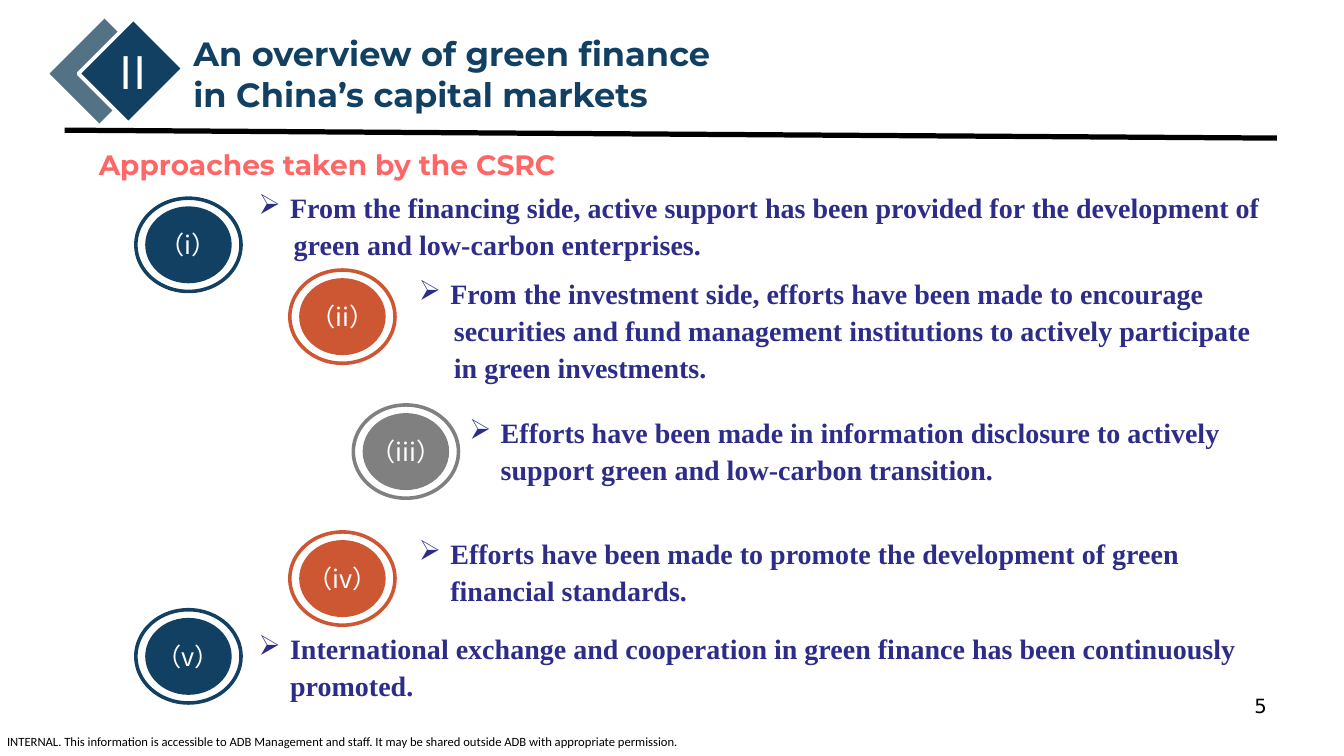
from dataclasses import dataclass

from lxml.etree import SubElement
from pptx import Presentation
from pptx.dml.color import RGBColor
from pptx.enum.shapes import MSO_CONNECTOR, MSO_SHAPE
from pptx.enum.text import MSO_ANCHOR, MSO_AUTO_SIZE, PP_ALIGN
from pptx.oxml.ns import qn
from pptx.util import Cm, Pt

NAVY = RGBColor(0x12, 0x40, 0x62)
SLATE = RGBColor(0x53, 0x72, 0x85)
RUST = RGBColor(0xCC, 0x57, 0x32)
GREY = RGBColor(0x80, 0x80, 0x80)
CORAL = RGBColor(0xFF, 0x66, 0x66)
INDIGO = RGBColor(0x2D, 0x2D, 0x89)
WHITE = RGBColor(0xFF, 0xFF, 0xFF)
BLACK = RGBColor(0x00, 0x00, 0x00)

BADGE_WIDTH, BADGE_HEIGHT = 2.74, 2.44
RING_WIDTH = 0.09
DISC_INSET_X, DISC_INSET_Y = 0.28, 0.25
BULLET_INDENT, CONTINUATION_INDENT = 0.79, 0.88


@dataclass(frozen=True)
class Box:
    left: float
    top: float
    width: float
    height: float

    def lengths(self):
        return Cm(self.left), Cm(self.top), Cm(self.width), Cm(self.height)

    def inset(self, x, y):
        return Box(self.left + x, self.top + y, self.width - 2 * x, self.height - 2 * y)


@dataclass(frozen=True)
class TextStyle:
    font: str
    size: float
    color: RGBColor
    bold: bool = False


@dataclass(frozen=True)
class Approach:
    numeral: str
    color: RGBColor
    badge_left: float
    badge_top: float
    text_box: Box
    lines: tuple


TITLE = TextStyle("Montserrat", 24, NAVY, True)
SUBTITLE = TextStyle("Montserrat", 20, CORAL, True)
SECTION = TextStyle("Noto Sans CJK SC", 32, WHITE)
NUMERAL = TextStyle("Noto Sans CJK SC", 18, WHITE)
BODY = TextStyle("Times New Roman", 20, INDIGO, True)
PAGE = TextStyle("DejaVu Sans", 14, BLACK)
NOTICE = TextStyle("Calibri", 9, BLACK)

APPROACHES = (
    Approach("i", NAVY, 3.38, 4.95, Box(6.27, 5, 26.49, 1.3), (
        "From the financing side, active support has been provided for the development of",
        "green and low-carbon enterprises.")),
    Approach("ii", RUST, 7.26, 6.76, Box(10.31, 7.65, 22.48, 1.27), (
        "From the investment side, efforts have been made to encourage",
        "securities and fund management institutions to actively participate",
        "in green investments.")),
    Approach("iii", GREY, 8.86, 10.16, Box(11.58, 10.69, 20.6, 1.27), (
        "Efforts have been made in information disclosure to actively support green "
        "and low-carbon transition.",)),
    Approach("iv", RUST, 7.26, 13.36, Box(10.31, 13.74, 21.84, 1.27), (
        "Efforts have been made to promote the development of green financial standards.",)),
    Approach("v", NAVY, 3.38, 15.32, Box(6.27, 16.13, 25.88, 1.27), (
        "International exchange and cooperation in green finance has been continuously "
        "promoted.",)),
)


def set_attributes(target, values: dict) -> None:
    for name, value in values.items():
        setattr(target, name, value)


def write(shape, lines: tuple, style: TextStyle, align=PP_ALIGN.LEFT, **frame_format) -> None:
    frame = shape.text_frame
    set_attributes(frame, {"word_wrap": True, "auto_size": MSO_AUTO_SIZE.NONE,
                           "vertical_anchor": MSO_ANCHOR.TOP, **frame_format})
    for index, line in enumerate(lines):
        paragraph = frame.add_paragraph() if index else frame.paragraphs[0]
        paragraph.alignment = align
        run = paragraph.add_run()
        run.text = line
        set_attributes(run.font, {"name": style.font, "size": Pt(style.size), "bold": style.bold})
        run.font.color.rgb = style.color
        SubElement(run._r.get_or_add_rPr(), qn("a:ea"), typeface=style.font)


def no_insets() -> dict:
    return dict.fromkeys(("margin_left", "margin_top", "margin_right", "margin_bottom"), 0)


def add_text(slide, box: Box, lines: tuple, style: TextStyle, **options):
    shape = slide.shapes.add_textbox(*box.lengths())
    write(shape, lines, style, **options)
    return shape


def add_figure(slide, kind, box: Box, fill=None, line=None, line_width=Pt(1)):
    shape = slide.shapes.add_shape(kind, *box.lengths())
    shape.shadow.inherit = False
    if fill is None:
        shape.fill.background()
    else:
        shape.fill.solid()
        shape.fill.fore_color.rgb = fill
    if line is None:
        shape.line.fill.background()
    else:
        shape.line.color.rgb = line
        shape.line.width = line_width
    return shape


def add_diamond(slide, left: float, fill: RGBColor, line=None) -> None:
    box = Box(left, 0.81, 1.78, 1.96)
    diamond = add_figure(slide, MSO_SHAPE.ROUNDED_RECTANGLE, box, fill, line, Pt(2.75))
    diamond.adjustments[0] = 0
    diamond.rotation = 45


def add_rule(slide) -> None:
    rule = slide.shapes.add_connector(
        MSO_CONNECTOR.STRAIGHT, Cm(1.63), Cm(3.28), Cm(32.18), Cm(3.48))
    rule.line.color.rgb = BLACK
    rule.line.width = Pt(3.75)
    SubElement(rule._element.spPr, qn("a:effectLst"))


def add_approach(slide, approach: Approach) -> None:
    badge = Box(approach.badge_left, approach.badge_top, BADGE_WIDTH, BADGE_HEIGHT)
    ring = badge.inset(RING_WIDTH / 2, RING_WIDTH / 2)
    add_figure(slide, MSO_SHAPE.OVAL, ring, line=approach.color, line_width=Cm(RING_WIDTH))
    disc = add_figure(slide, MSO_SHAPE.OVAL, badge.inset(DISC_INSET_X, DISC_INSET_Y),
                      approach.color)
    write(disc, (f"（{approach.numeral}）",), NUMERAL, align=PP_ALIGN.CENTER,
          **{**no_insets(), "word_wrap": False, "vertical_anchor": MSO_ANCHOR.MIDDLE})

    text = add_text(slide, approach.text_box, approach.lines, BODY,
                    vertical_anchor=MSO_ANCHOR.MIDDLE)
    for index, paragraph in enumerate(text.text_frame.paragraphs):
        properties = paragraph._p.get_or_add_pPr()
        if index:
            properties.set("marL", str(Cm(CONTINUATION_INDENT)))
        else:
            properties.set("marL", str(Cm(BULLET_INDENT)))
            properties.set("indent", str(-Cm(BULLET_INDENT)))
            SubElement(properties, qn("a:buChar"), char="➢")
        paragraph.line_spacing = 1.1


def main() -> None:
    presentation = Presentation()
    presentation.slide_width = Cm(33.87)
    presentation.slide_height = Cm(19.05)
    slide = presentation.slides.add_slide(presentation.slide_layouts[5])

    title = slide.shapes.title
    position = Box(4.62, 0.71, 14.83, 2.31).lengths()
    set_attributes(title, dict(zip(("left", "top", "width", "height"), position)))
    write(title, ("An overview of green finance", "in China’s capital markets"), TITLE)

    add_text(slide, Box(0.18, 18.49, 17.02, 0.38), (
        "INTERNAL. This information is accessible to ADB Management and staff. "
        "It may be shared outside ADB with appropriate permission.",), NOTICE, **no_insets())
    add_diamond(slide, 1.68, SLATE)
    add_diamond(slide, 2.41, NAVY, WHITE)
    add_text(slide, Box(2.77, 0.99, 1.17, 1.63), ("II",), SECTION,
             align=PP_ALIGN.CENTER, word_wrap=False)
    add_text(slide, Box(2.24, 3.58, 12.7, 1.96), ("Approaches taken by the CSRC",), SUBTITLE)
    add_rule(slide)
    add_text(slide, Box(24.28, 17.35, 7.9, 1.32), ("5",), PAGE, align=PP_ALIGN.RIGHT)
    for approach in APPROACHES:
        add_approach(slide, approach)

    presentation.save("out.pptx")


if __name__ == "__main__":
    main()
